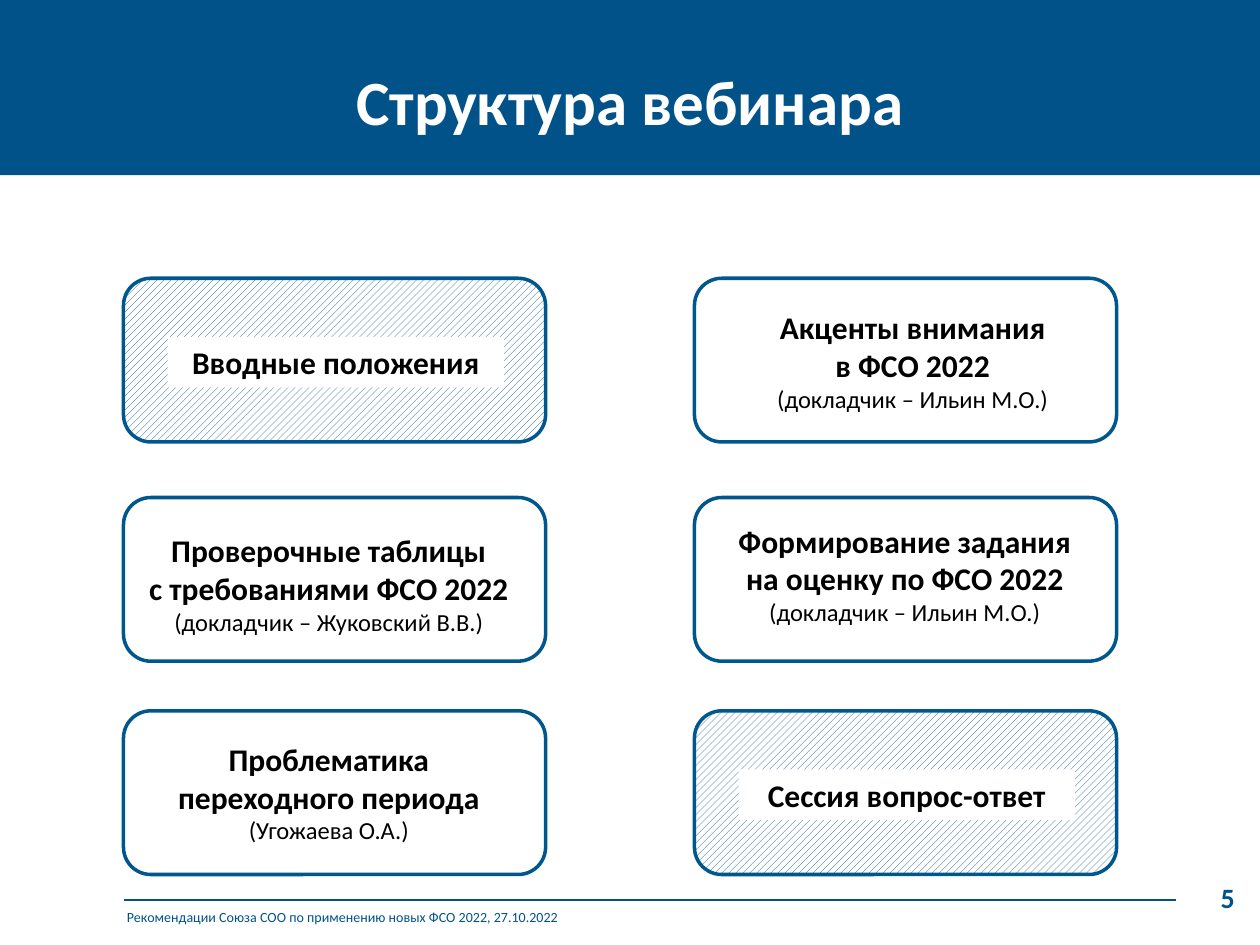
import pptx
import pptx.util
import pptx.dml.color
import pptx.enum.dml
import pptx.enum.shapes
import pptx.enum.text
from lxml import etree

Cm = pptx.util.Cm
Pt = pptx.util.Pt
ALIGN = pptx.enum.text.PP_ALIGN
ANCHOR = pptx.enum.text.MSO_ANCHOR
SHAPE = pptx.enum.shapes.MSO_SHAPE

COLORS = {"blue": "015289", "edge": "00578E", "white": "FFFFFF", "black": "000000"}
FONT = "Calibri"

# Card grid, in cm
COLS = (2.49, 14)
ROWS = (5.61, 10.03, 14.33)
CARD_W, CARD_H = 8.51, 3.3

# Column, row, heading, speaker, text offset (x, y) and width
TALKS = (
    (1, 0, "Акценты внимания\vв ФСО 2022", "(докладчик – Ильин М.О.)", 1.02, 0.48, 6.76),
    (0, 1, "Проверочные таблицы\vс требованиями ФСО 2022", "(докладчик – Жуковский В.В.)", 0.18, 0.56, 7.92),
    (1, 1, "Формирование задания на оценку по ФСО 2022", "(докладчик – Ильин М.О.)", 0.28, 0.36, 7.92),
    (0, 2, "Проблематика переходного периода", "(Угожаева О.А.)", 0.18, 0.46, 7.92),
)
# Column, row, label
FRAMES = ((0, 0, "Вводные положения"), (1, 2, "Сессия вопрос-ответ"))


def color(name):
    return pptx.dml.color.RGBColor.from_string(COLORS[name])


def write(frame, lines, tone, align):
    """Fill a frame with (text, size, bold) lines."""
    frame.word_wrap = True
    frame.text = "\n".join(text for text, _, _ in lines)
    for para, (_, size, bold) in zip(frame.paragraphs, lines):
        para.alignment = align
        for run in para.runs:
            run.font.name = FONT
            run.font.size = Pt(size)
            run.font.bold = bold
            run.font.color.rgb = color(tone)


def add_text(slide, x, y, w, h, lines, tone="black", align=ALIGN.CENTER):
    box = slide.shapes.add_textbox(Cm(x), Cm(y), Cm(w), Cm(h))
    write(box.text_frame, lines, tone, align)


def add_block(slide, x, y, w, h, tone):
    block = slide.shapes.add_shape(SHAPE.RECTANGLE, Cm(x), Cm(y), Cm(w), Cm(h))
    block.shadow.inherit = False
    block.fill.solid()
    block.fill.fore_color.rgb = color(tone)
    block.line.fill.background()
    return block


def add_card(slide, col, row, hatched=False):
    """Draw one rounded card and return its corner."""
    x, y = COLS[col], ROWS[row]
    card = slide.shapes.add_shape(
        SHAPE.ROUNDED_RECTANGLE, Cm(x), Cm(y), Cm(CARD_W), Cm(CARD_H))
    card.shadow.inherit = False
    card.line.color.rgb = color("edge")
    card.line.width = Pt(2)
    if hatched:
        card.fill.patterned()
        card.fill.pattern = pptx.enum.dml.MSO_PATTERN.WIDE_UPWARD_DIAGONAL
        card.fill.fore_color.rgb = color("blue")
        card.fill.back_color.rgb = color("white")
    else:
        card.fill.background()
    return x, y


def add_talk(slide, col, row, head, note, dx, dy, width):
    x, y = add_card(slide, col, row)
    add_text(slide, x + dx, y + dy, width, 2.39,
             [(head, 18, True), (note, 14, False)])


def add_frame(slide, col, row, label):
    x, y = add_card(slide, col, row, hatched=True)
    block = add_block(slide, x + 0.89, y + 1.18, 6.78, 1.02, "white")
    block.text_frame.vertical_anchor = ANCHOR.MIDDLE
    write(block.text_frame, [(label, 18, True)], "black", ALIGN.CENTER)


def add_rule(slide, x, y, end):
    rule = slide.shapes.add_connector(
        pptx.enum.shapes.MSO_CONNECTOR.STRAIGHT, Cm(x), Cm(y), Cm(end), Cm(y))
    rule.line.color.rgb = color("blue")
    rule.line.width = Pt(1.5)
    props = rule.element.spPr
    etree.SubElement(props, pptx.oxml.ns.qn("a:effectLst"))


def main():
    deck = pptx.Presentation()
    deck.slide_width, deck.slide_height = Cm(25.4), Cm(19.05)
    slide = deck.slides.add_slide(deck.slide_layouts[6])

    # Footer
    add_text(slide, 18.49, 17.63, 6.65, 0.94, [("5", 16, True)], "blue", ALIGN.RIGHT)
    add_rule(slide, 2.49, 18.14, 23.7)
    add_text(slide, 2.31, 18.19, 21.18, 0.6,
             [("Рекомендации Союза СОО по применению новых ФСО 2022, 27.10.2022", 8, False)],
             "blue", ALIGN.LEFT)

    # Title band
    add_block(slide, 0, 0, 25.4, 3.53, "blue")
    add_text(slide, 0, 1.14, 25.4, 1.8, [("Структура вебинара", 36, True)], "white")

    # Cards
    for talk in TALKS:
        add_talk(slide, *talk)
    for frame in FRAMES:
        add_frame(slide, *frame)

    deck.save("out.pptx")


if __name__ == "__main__":
    main()
